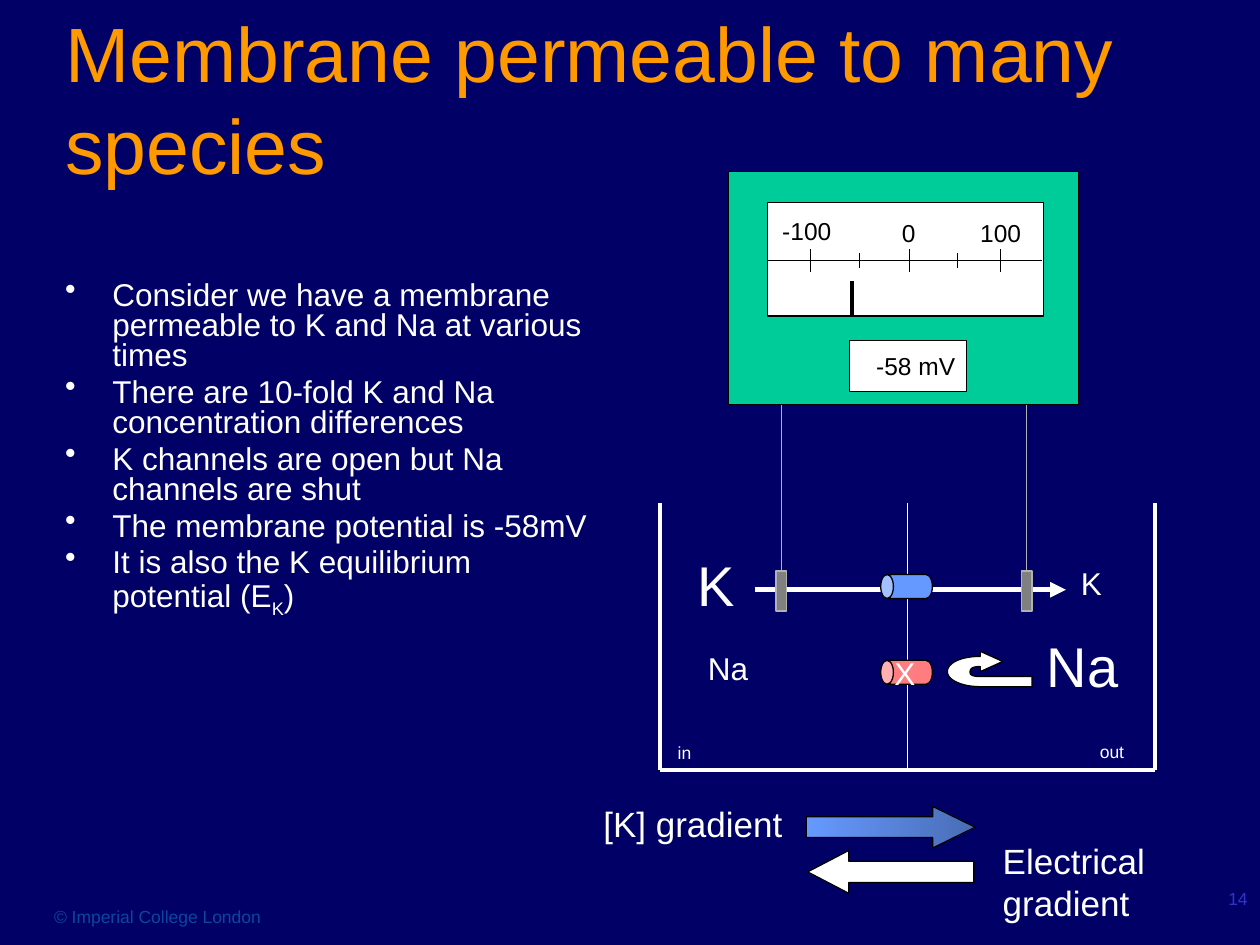
from lxml import etree
from pptx import Presentation
from pptx.dml.color import RGBColor
from pptx.enum import dml, shapes, text
from pptx.oxml import ns
from pptx.util import Pt

HUES = {
    "navy": "000066", "orange": "FF9900", "white": "FFFFFF", "black": "000000",
    "green": "00CC99", "gray": "808080", "silver": "B2B2B2", "blue": "6699FF",
    "steel": "496DB6", "red": "FF7C80", "credit": "0C479D", "page": "3333CC",
}
RGB = {name: RGBColor.from_string(code) for name, code in HUES.items()}
KIND = shapes.MSO_SHAPE
ALIGN = text.PP_ALIGN

deck = Presentation()
deck.slide_width, deck.slide_height = Pt(720), Pt(540)
slide = deck.slides.add_slide(deck.slide_layouts[6])
slide.background.fill.solid()
slide.background.fill.fore_color.rgb = RGB["navy"]
items = slide.shapes


def write(words, box, size=18, hue="white", align=ALIGN.LEFT, wrap=True,
          middle=False, bullet=False):
    """Add a text box; each line is a paragraph, and |x| is a subscript."""
    frame = items.add_textbox(*map(Pt, box)).text_frame
    frame.word_wrap = wrap
    frame.vertical_anchor = text.MSO_ANCHOR.MIDDLE if middle else text.MSO_ANCHOR.TOP
    for row, line in enumerate(words.split("\n")):
        para = frame.add_paragraph() if row else frame.paragraphs[0]
        para.alignment = align
        if bullet:
            para.line_spacing = 0.8
            if row:
                para.space_before = Pt(size * 0.2)
            props = para._p.get_or_add_pPr()
            props.set("marL", str(Pt(27)))
            props.set("indent", str(Pt(-27)))
            etree.SubElement(props, ns.qn("a:buChar")).set("char", "•")
        for part, piece in enumerate(line.split("|")):
            run = para.add_run()
            run.text = piece
            run.font.name, run.font.size = "Arial", Pt(size)
            run.font.color.rgb = RGB[hue]
            if part % 2:
                run.font._element.set("baseline", "-25000")


def paint(shape, fill, line="black"):
    shape.shadow.inherit = False
    shape.fill.solid()
    shape.fill.fore_color.rgb = RGB[fill]
    shape.line.color.rgb = RGB[line]
    shape.line.width = Pt(0.75)
    return shape


# Heading, bullets and footer
write("© Imperial College London", (23.8, 514.1, 162, 19.4), size=10, hue="credit")
write("14", (570.2, 504, 149.8, 36), size=10, hue="page", align=ALIGN.RIGHT)
write("Membrane permeable to many species", (30.2, 28.8, 666.7, 54),
      size=44, hue="orange", middle=True)
points = [
    "Consider we have a membrane permeable to K and Na at various times",
    "There are 10-fold K and Na concentration differences",
    "K channels are open but Na channels are shut",
    "The membrane potential is -58mV",
    "It is also the K equilibrium potential (E|K|)",
]
write("\n".join(points), (30.2, 157.7, 312.5, 285), bullet=True)

# Gradient arrows
chem = paint(items.add_shape(KIND.RIGHT_ARROW, Pt(460.8), Pt(460.8), Pt(96.5), Pt(23.8)), "blue")
chem.adjustments[1] = 1.02
chem.fill.gradient()
chem.fill.gradient_angle = 0
for stop, hue, place in zip(chem.fill.gradient_stops, ("blue", "steel"), (0, 1)):
    stop.color.rgb = RGB[hue]
    stop.position = place
volt = paint(items.add_shape(KIND.LEFT_ARROW, Pt(461.5), Pt(486), Pt(95), Pt(24.5)), "white")
volt.adjustments[1] = 0.96
write("[K] gradient", (337.7, 455, 124.6, 31), size=20)
write("Electrical gradient", (565.9, 475.9, 114.5, 55.4), size=20)

# Meter, electrodes and channels, back to front
left, right, top, base, mid = 377.3, 660.2, 287.3, 439.9, 518.4
leads = (446.4, 586.8)
axis = 149
lines = [
    (431.3, 337, 609.1, 337, "white", 3),
    (left, top, left, base, "white", 2.25),
    (left, base, right, base, "white", 2.25),
    (right, top, right, base, "white", 2.25),
    (mid, top, mid, base, "white", 0.75),
]
lines += [(x, 332, x, 230, "silver", 0.75) for x in leads]
scale = [(438.5, axis, 595.4, axis, "black", 0.75)]
for half, spots in ((4.3, (491, 547.2)), (6.5, (463, 519.8, 571.7))):
    scale += [(x, axis - half, x, axis + half, "black", 0.75) for x in spots]
scale.append((486.7, 160.6, 486.7, 180.7, "black", 2.25))
plates = [(x - 2.9, 326.2, 5.8, 23, "gray", "silver") for x in leads]
plates += [
    (416.2, 97.9, 200.2, 133.2, "green", "black"),
    (438.5, 115.9, 157.7, 64.8, "white", "black"),
    (485.3, 194.4, 67, 29.5, "white", "black"),
]
for group in (lines, plates, scale):
    for part in group:
        if group is plates:
            paint(items.add_shape(KIND.RECTANGLE, *map(Pt, part[:4])), *part[4:])
            continue
        wire = items.add_connector(shapes.MSO_CONNECTOR.STRAIGHT, *map(Pt, part[:4]))
        wire.line.color.rgb, wire.line.width = RGB[part[4]], Pt(part[5])
        if part is lines[0]:
            etree.SubElement(wire.line._get_or_add_ln(), ns.qn("a:tailEnd")).set("type", "triangle")
        etree.SubElement(wire._element.spPr, ns.qn("a:effectLst"))

for y, hue in ((369.4, "red"), (320.4, "blue")):
    can = paint(items.add_shape(KIND.CAN, Pt(511.2), Pt(y), Pt(13.7), Pt(29.5)), hue)
    can.adjustments[0] = 0.53
    can.rotation = 270

# Sodium turned back: pairs are corners, sixes are Bezier curves
trace = [
    (573.1, 378), (560.2, 372.2), (560.2, 375.1),
    (549.4, 375.1, 541.4, 378.7, 541.4, 383.8),
    (541.4, 388.8, 550.1, 392.4, 560.2, 392.4),
    (589.7, 392.4), (589.7, 386.6), (560.2, 386.6),
    (556.6, 386.6, 554.4, 385.9, 554.4, 384.5), (554.4, 383.8),
    (554.4, 381.6, 556.6, 380.9, 560.2, 380.9), (560.2, 383.8),
]
dots = [trace[0]]
for step in trace[1:]:
    if len(step) == 2:
        dots.append(step)
        continue
    start = dots[-1]
    for n in range(1, 13):
        t = n / 12
        s = 1 - t
        dots.append(tuple(
            s**3 * start[i] + 3 * s * s * t * step[i]
            + 3 * s * t * t * step[i + 2] + t**3 * step[i + 4] for i in (0, 1)))
pen = items.build_freeform(*map(Pt, dots[0]))
pen.add_line_segments([(Pt(x), Pt(y)) for x, y in dots[1:]], close=True)
paint(pen.convert_to_shape(), "white")

# Labels
for words, box in (("-100", (439.9, 120.2, 46.8, 23.8)),
                   ("0", (508.3, 121, 27.4, 23.8)),
                   ("100", (553, 121, 46.8, 23.8))):
    write(words, box, size=14, hue="black")
write("-58 mV", (478.1, 197.3, 74.9, 23.8), size=14, hue="black", align=ALIGN.RIGHT)
for words, size, box in (("in", 10, (380.2, 420.5, 28, 19.4)),
                         ("out", 10, (621.4, 419.8, 33, 19.4)),
                         ("K", 32, (391.7, 311, 59.8, 45.4)),
                         ("Na", 32, (591.1, 357.1, 59.8, 45.4)),
                         ("X", 18, (504, 370, 34.6, 28.8))):
    write(words, box, size=size)
write("K", (610.6, 319, 26.6, 28.8), wrap=False)
write("Na", (397.4, 367.2, 37.4, 28.8), wrap=False)

deck.save("out.pptx")
